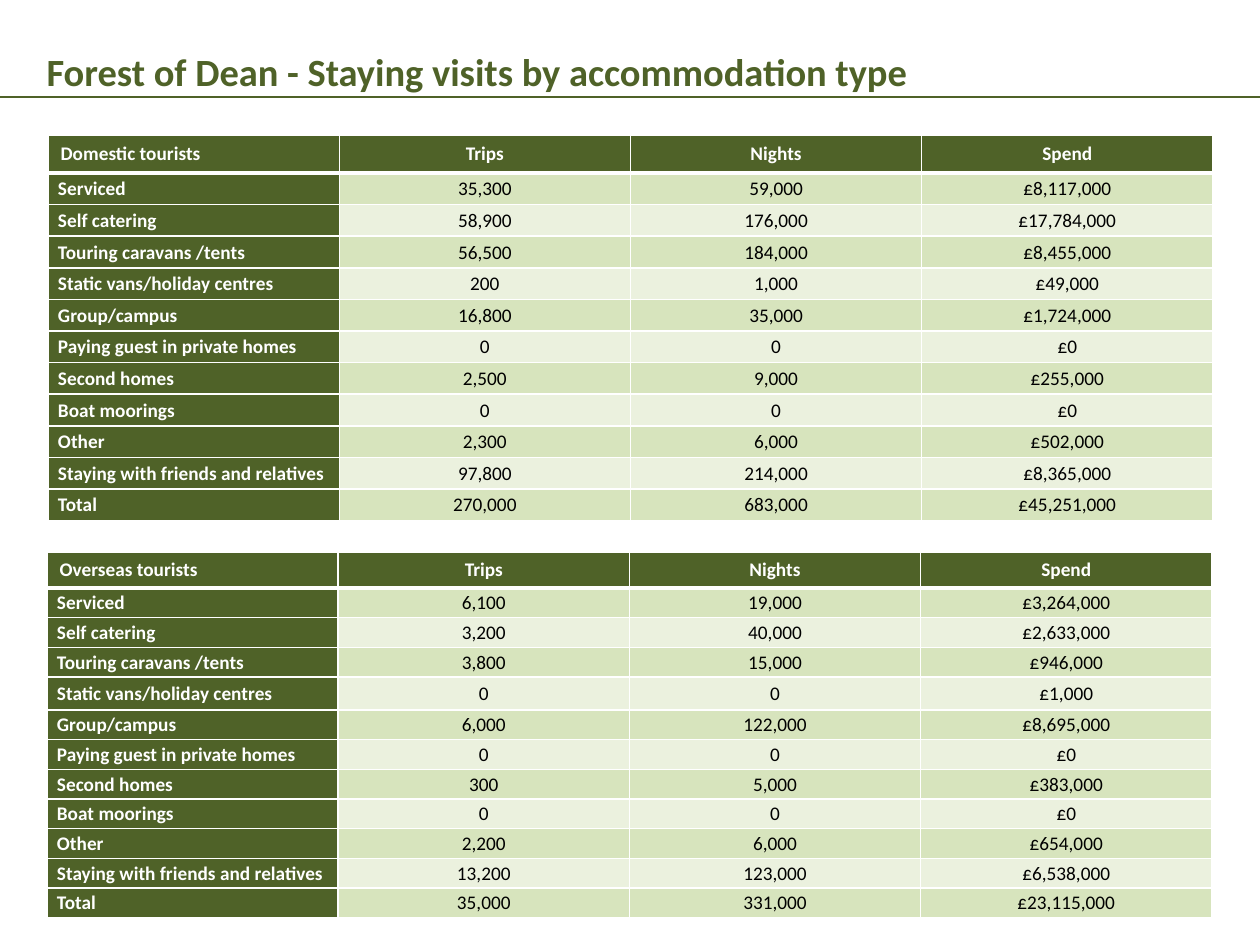
import dataclasses

import pptx
import pptx.dml.color
import pptx.enum.shapes
import pptx.enum.text
import pptx.oxml
import pptx.oxml.ns
import pptx.util
from lxml import etree

PP_ALIGN = pptx.enum.text.PP_ALIGN
ANCHOR = pptx.enum.text.MSO_ANCHOR


@dataclasses.dataclass(frozen=True)
class Theme:
    font: str = "Calibri"
    green: str = "4F6228"
    band_dark: str = "D7E4BD"
    band_light: str = "EBF1DE"
    white: str = "FFFFFF"
    black: str = "000000"
    title_size: int = 22
    table_size: int = 11
    grid_pt: int = 1
    header_rule_pt: int = 3


@dataclasses.dataclass(frozen=True)
class VisitTable:
    heading: str
    left: int
    top: int
    header_height: int
    body_height: int
    rows: tuple[tuple[str, str, str], ...]
    tall_rows: dict[int, int] = dataclasses.field(default_factory=dict)


THEME = Theme()
PX_PER_INCH = 126
TABLE_WIDTH = 1165
LABEL_INSET = 10
CELL_INSET = 1
MEASURES = ("Trips", "Nights", "Spend")
ACCOMMODATION = (
    "Serviced",
    "Self catering",
    "Touring caravans /tents",
    "Static vans/holiday centres",
    "Group/campus",
    "Paying guest in private homes",
    "Second homes",
    "Boat moorings",
    "Other",
    "Staying with friends and relatives",
    "Total",
)
DOMESTIC = VisitTable("Domestic tourists", 48, 135, 38, 348, (
    ("35,300", "59,000", "£8,117,000"),
    ("58,900", "176,000", "£17,784,000"),
    ("56,500", "184,000", "£8,455,000"),
    ("200", "1,000", "£49,000"),
    ("16,800", "35,000", "£1,724,000"),
    ("0", "0", "£0"),
    ("2,500", "9,000", "£255,000"),
    ("0", "0", "£0"),
    ("2,300", "6,000", "£502,000"),
    ("97,800", "214,000", "£8,365,000"),
    ("270,000", "683,000", "£45,251,000"),
))
OVERSEAS = VisitTable("Overseas tourists", 47, 552, 36, 330, (
    ("6,100", "19,000", "£3,264,000"),
    ("3,200", "40,000", "£2,633,000"),
    ("3,800", "15,000", "£946,000"),
    ("0", "0", "£1,000"),
    ("6,000", "122,000", "£8,695,000"),
    ("0", "0", "£0"),
    ("300", "5,000", "£383,000"),
    ("0", "0", "£0"),
    ("2,200", "6,000", "£654,000"),
    ("13,200", "123,000", "£6,538,000"),
    ("35,000", "331,000", "£23,115,000"),
), tall_rows={3: 33})


def px(n: int) -> int:
    return pptx.util.Emu(round(n * 914400 / PX_PER_INCH))


def rgb(code: str) -> pptx.dml.color.RGBColor:
    return pptx.dml.color.RGBColor.from_string(code)


def set_text(tf, text: str, *, size: int, color: str, bold: bool = False,
             align=PP_ALIGN.LEFT, line_spacing: float | None = None) -> None:
    p = tf.paragraphs[0]
    p.alignment = align
    if line_spacing:
        p.line_spacing = line_spacing
    r = p.add_run()
    r.text = text
    r.font.name = THEME.font
    r.font.size = pptx.util.Pt(size)
    r.font.bold = bold
    r.font.color.rgb = rgb(color)


def set_borders(cell, bottom_pt: int, top_pt: int) -> None:
    """Put white rules on all four sides, ahead of the cell's fill."""
    tc_pr = cell._tc.get_or_add_tcPr()
    widths = {"lnL": THEME.grid_pt, "lnR": THEME.grid_pt, "lnT": top_pt, "lnB": bottom_pt}
    for i, (side, width) in enumerate(widths.items()):
        ln = etree.Element(pptx.oxml.ns.qn(f"a:{side}"), w=str(pptx.util.Pt(width)))
        fill = etree.SubElement(ln, pptx.oxml.ns.qn("a:solidFill"))
        etree.SubElement(fill, pptx.oxml.ns.qn("a:srgbClr"), val=THEME.white)
        tc_pr.insert(i, ln)


def format_cell(cell, text: str, row: int, col: int) -> None:
    is_header, is_label = row == 0, col == 0
    strong = is_header or is_label
    band = THEME.band_dark if row % 2 else THEME.band_light
    cell.fill.solid()
    cell.fill.fore_color.rgb = rgb(THEME.green if strong else band)
    cell.vertical_anchor = ANCHOR.MIDDLE
    if not is_header:
        cell.margin_left = px(LABEL_INSET if is_label else CELL_INSET)
        cell.margin_top = cell.margin_right = px(CELL_INSET)
        cell.margin_bottom = 0
    set_text(cell.text_frame, text, size=THEME.table_size, bold=strong,
             color=THEME.white if strong else THEME.black,
             align=PP_ALIGN.LEFT if is_label else PP_ALIGN.CENTER)
    set_borders(cell,
                bottom_pt=THEME.header_rule_pt if is_header else THEME.grid_pt,
                top_pt=THEME.header_rule_pt if row == 1 else THEME.grid_pt)


def add_visit_table(s, visits: VisitTable) -> None:
    content = [(visits.heading, *MEASURES)]
    content += [(name, *values) for name, values in zip(ACCOMMODATION, visits.rows)]
    table = s.shapes.add_table(
        len(content), len(content[0]), px(visits.left), px(visits.top),
        px(TABLE_WIDTH), px(visits.header_height + visits.body_height)).table
    for column in table.columns:
        column.width = px(TABLE_WIDTH) // len(content[0])

    spare = visits.body_height - sum(visits.tall_rows.values())
    even_height = px(spare) // (len(visits.rows) - len(visits.tall_rows))
    table.rows[0].height = px(visits.header_height)
    for i in range(len(visits.rows)):
        tall = visits.tall_rows.get(i)
        table.rows[i + 1].height = px(tall) if tall else even_height

    for row, texts in enumerate(content):
        for col, text in enumerate(texts):
            format_cell(table.cell(row, col), text, row, col)


def add_title(s, text: str) -> None:
    sp = s.shapes.title
    sp.left, sp.top, sp.width, sp.height = px(34), px(32), px(1201), px(69)
    tf = sp.text_frame
    tf.word_wrap = True
    tf.auto_size = pptx.enum.text.MSO_AUTO_SIZE.SHAPE_TO_FIT_TEXT
    tf.vertical_anchor = ANCHOR.TOP
    set_text(tf, text, size=THEME.title_size, color=THEME.green, bold=True, line_spacing=1.2)


def add_title_rule(s, width: int) -> None:
    rule = s.shapes.add_connector(
        pptx.enum.shapes.MSO_CONNECTOR.STRAIGHT, 0, px(97), width, px(97))
    rule.line.color.rgb = rgb(THEME.green)
    rule.line.width = pptx.util.Pt(0.75)
    etree.SubElement(rule._element.spPr, pptx.oxml.ns.qn("a:effectLst"))


def main() -> None:
    prs = pptx.Presentation()
    prs.slide_width, prs.slide_height = px(1260), px(945)
    s = prs.slides.add_slide(prs.slide_layouts.get_by_name("Title Only"))
    add_title(s, "Forest of Dean - Staying visits by accommodation type")
    add_title_rule(s, prs.slide_width)
    for visits in (DOMESTIC, OVERSEAS):
        add_visit_table(s, visits)
    prs.save("out.pptx")


if __name__ == "__main__":
    main()
